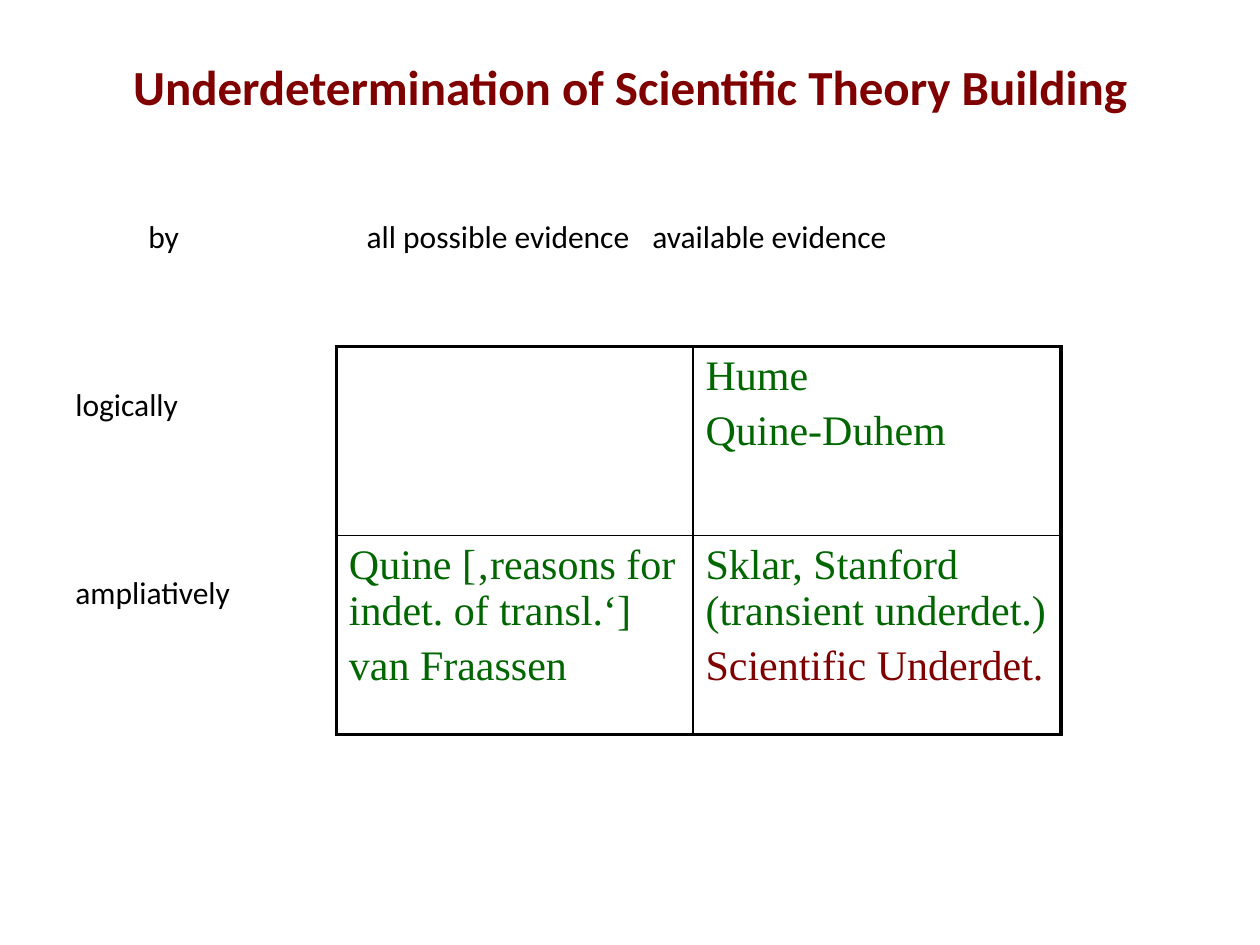
from collections import namedtuple

from lxml.etree import SubElement
from pptx import Presentation
from pptx.dml.color import RGBColor
from pptx.enum.text import MSO_ANCHOR, PP_ALIGN
from pptx.oxml.ns import qn
from pptx.util import Cm, Pt

Box = namedtuple("Box", "left top width height")

COLOURS = {"maroon": "800000", "green": "006600", "black": "000000"}
COLUMN_WIDTHS = (7.19, 7.42)
ROW_HEIGHTS = (3.81, 4.01)
POSITIONS = [
    [[], [("Hume", "green"), ("Quine-Duhem", "green")]],
    [
        [("Quine [‚reasons for indet. of transl.‘]", "green"), ("van Fraassen", "green")],
        [("Sklar, Stanford (transient underdet.)", "green"), ("Scientific Underdet.", "maroon")],
    ],
]


def add_span(para, text, size, colour, font="Calibri", bold=False):
    """Add one formatted run to a paragraph."""
    span = para.add_run()
    span.text = text
    span.font.name = font
    span.font.size = Pt(size)
    span.font.bold = bold
    span.font.color.rgb = RGBColor.from_string(COLOURS[colour])


def place_title(page, box, text):
    """Move and format the title placeholder."""
    title = page.shapes.title
    title.left, title.top, title.width, title.height = map(Cm, box)
    frame = title.text_frame
    frame.vertical_anchor = MSO_ANCHOR.TOP
    frame.margin_top = Cm(0.38)
    para = frame.paragraphs[0]
    para.alignment = PP_ALIGN.CENTER
    add_span(para, text, 28, "maroon", bold=True)


def add_label(page, box, text, margin_top=0.13):
    """Add a plain heading and return its paragraph."""
    frame = page.shapes.add_textbox(*map(Cm, box)).text_frame
    frame.word_wrap = True
    frame.margin_top = Cm(margin_top)
    para = frame.paragraphs[0]
    add_span(para, text, 18, "black")
    return para


def add_column_headings(page, box, headings, stops):
    """Add the column headings on one line, set apart by tab stops."""
    para = add_label(page, box, "\t".join(headings))
    tabs = SubElement(para._p.get_or_add_pPr(), qn("a:tabLst"))
    for stop in stops:
        SubElement(tabs, qn("a:tab"), pos=str(Cm(stop)), algn="l")


def set_borders(cell, widths):
    """Draw the four cell borders with the given widths in points."""
    properties = cell._tc.get_or_add_tcPr()
    for side, width in zip("LRTB", widths):
        line = SubElement(properties, qn(f"a:ln{side}"), w=str(Pt(width)))
        fill = SubElement(line, qn("a:solidFill"))
        SubElement(fill, qn("a:srgbClr"), val=COLOURS["black"])


def add_matrix(page, box, rows):
    """Add the table of positions with a heavy frame and thin inner lines."""
    table = page.shapes.add_table(len(rows), len(rows[0]), *map(Cm, box)).table
    table.first_row = table.horz_banding = False
    for column, width in zip(table.columns, COLUMN_WIDTHS):
        column.width = Cm(width)
    for row, height in zip(table.rows, ROW_HEIGHTS):
        row.height = Cm(height)
    for r, row in enumerate(rows):
        for c, entries in enumerate(row):
            cell = table.cell(r, c)
            edges = (c == 0, c == len(row) - 1, r == 0, r == len(rows) - 1)
            set_borders(cell, [2.25 if outer else 1 for outer in edges])
            cell.fill.background()
            frame = cell.text_frame
            for index, (text, colour) in enumerate(entries):
                para = frame.add_paragraph() if index else frame.paragraphs[0]
                para.space_before = Pt(4.8)
                add_span(para, text, 24, colour, "Times New Roman")


def main():
    """Build the slide and save it."""
    deck = Presentation()
    deck.slide_width, deck.slide_height = Cm(25.4), Cm(19.05)
    page = deck.slides.add_slide(deck.slide_layouts[5])
    place_title(page, Box(1.27, 0.76, 22.86, 3.18),
                "Underdetermination of Scientific Theory Building")
    add_matrix(page, Box(6.78, 6.99, sum(COLUMN_WIDTHS), sum(ROW_HEIGHTS)), POSITIONS)
    add_column_headings(page, Box(2.74, 4.24, 18.26, 1.02),
                        ["by", "all possible evidence", "available evidence"], [4.4, 10.16])
    add_label(page, Box(1.27, 6.78, 4.7, 2.11), "logically", margin_top=0.99)
    add_label(page, Box(1.27, 11.43, 4.72, 1.27), "ampliatively")
    deck.save("out.pptx")


if __name__ == "__main__":
    main()
